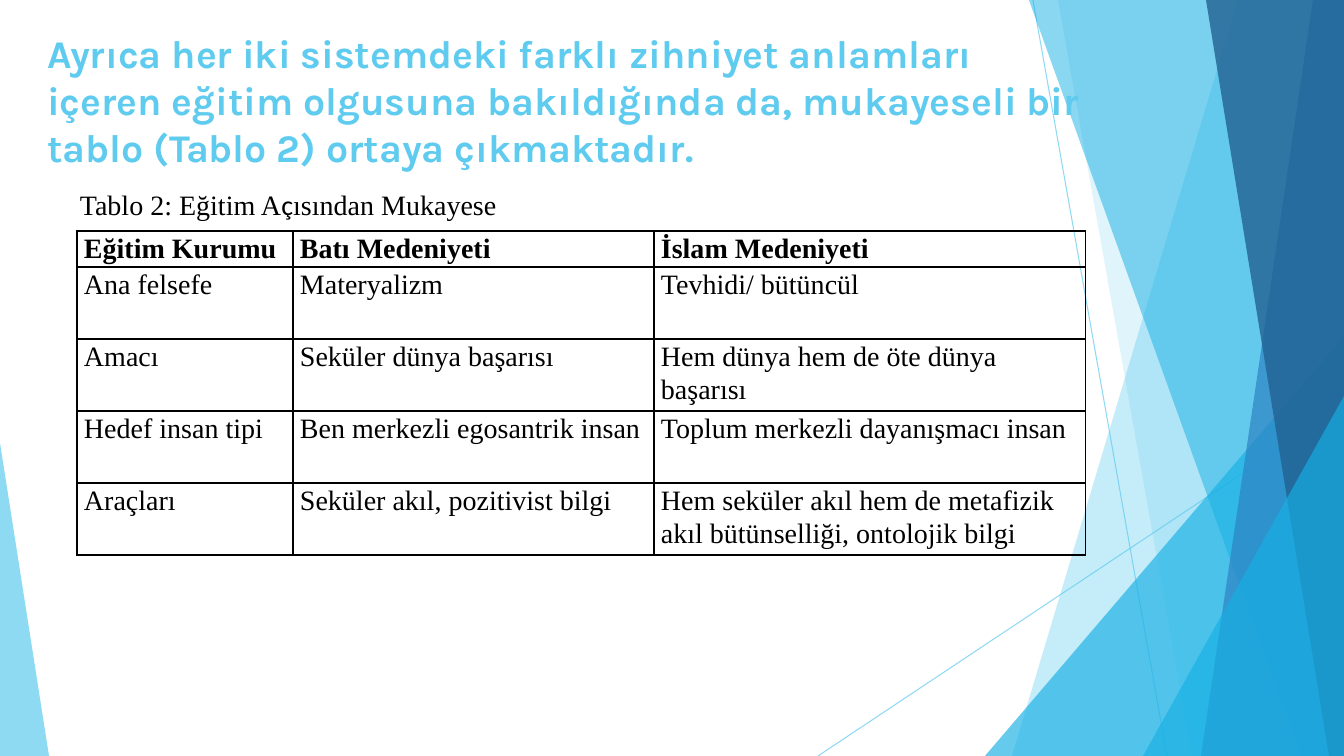
import lxml.etree
import pptx
import pptx.dml.color
import pptx.enum.shapes
import pptx.enum.text
import pptx.oxml.ns
import pptx.util

WIDTH, HEIGHT = 1344, 756
SCALE = 12192000 / WIDTH
SKY = pptx.dml.color.RGBColor(0x5F, 0xCB, 0xEF)
CYAN = pptx.dml.color.RGBColor(0x17, 0xB0, 0xE4)
BLUE = pptx.dml.color.RGBColor(0x2E, 0x83, 0xC3)
NAVY = pptx.dml.color.RGBColor(0x22, 0x62, 0x92)
BLACK = pptx.dml.color.RGBColor(0, 0, 0)
SERIF = "Times New Roman"

TITLE = ("Ayrıca her iki sistemdeki farklı zihniyet anlamları içeren eğitim olgusuna "
         "bakıldığında da, mukayeseli bir tablo (Tablo 2) ortaya çıkmaktadır.")
CAPTION = [("Tablo 2: Eğitim A", SERIF), ("ç", "Calibri"), ("ısından Mukayese", SERIF)]
COLUMNS = [216, 361, 432]
HEADER_HEIGHT, ROW_HEIGHT = 36, 72
ROWS = [
    ("Eğitim Kurumu", "Batı Medeniyeti", "İslam Medeniyeti"),
    ("Ana felsefe", "Materyalizm", "Tevhidi/ bütüncül"),
    ("Amacı", "Seküler dünya başarısı", "Hem dünya hem de öte dünya başarısı"),
    ("Hedef insan tipi", "Ben merkezli egosantrik insan", "Toplum merkezli dayanışmacı insan"),
    ("Araçları", "Seküler akıl, pozitivist bilgi",
     "Hem seküler akıl hem de metafizik akıl bütünselliği, ontolojik bilgi"),
]


def px(*lengths):
    return [pptx.util.Emu(round(length * SCALE)) for length in lengths]


def add_child(parent, tag, **attributes):
    return lxml.etree.SubElement(parent, pptx.oxml.ns.qn(tag), attributes)


def set_opacity(element, percent):
    for color in element.iter(pptx.oxml.ns.qn("a:srgbClr")):
        add_child(color, "a:alpha", val=str(percent * 1000))


def paint(shape, color, opacity):
    shape.shadow.inherit = False
    shape.line.fill.background()
    shape.fill.solid()
    shape.fill.fore_color.rgb = color
    set_opacity(shape.element.spPr, opacity)


def add_ray(page, start, end):
    ray = page.shapes.add_connector(
        pptx.enum.shapes.MSO_CONNECTOR.STRAIGHT, *px(*start, *end))
    ray.line.color.rgb = SKY
    ray.line.width = pptx.util.Pt(0.75)
    set_opacity(ray.element.spPr, 70)
    add_child(ray.element.spPr, "a:effectLst")


def add_band(page, top_left, bottom_left, color, opacity):
    outline = page.shapes.build_freeform(top_left, 0, scale=SCALE)
    outline.add_line_segments([(WIDTH, 0), (WIDTH, HEIGHT), (bottom_left, HEIGHT)])
    paint(outline.convert_to_shape(), color, opacity)


def add_triangle(page, left, top, width, apex, color, opacity):
    triangle = page.shapes.add_shape(
        pptx.enum.shapes.MSO_SHAPE.ISOSCELES_TRIANGLE, *px(left, top, width, HEIGHT - top))
    triangle.adjustments[0] = apex
    paint(triangle, color, opacity)


def add_backdrop(page):
    add_ray(page, (1033, 0), (1167, HEIGHT))
    add_ray(page, (WIDTH, 406), (818, HEIGHT))
    add_band(page, 1238, 1012, SKY, 36)
    add_band(page, 1058, 1192, SKY, 20)
    add_triangle(page, 985, 336, 359, 1, CYAN, 66)
    add_band(page, 1029, 1301, CYAN, 50)
    add_band(page, 1313, 1201, BLUE, 70)
    add_band(page, 1206, 1329, NAVY, 80)
    add_triangle(page, 1143, 396, 201, 1, CYAN, 66)
    add_triangle(page, 0, 443, 49, 0, SKY, 70)


def set_font(font, name, size, color, bold):
    font.name = name
    font.size = pptx.util.Pt(size)
    font.color.rgb = color
    font.bold = bold


def add_title(page, left, top, width, height):
    title = page.shapes.title
    title.left, title.top, title.width, title.height = px(left, top, width, height)
    title.element.getparent().append(title.element)
    frame = title.text_frame
    frame.text = TITLE
    frame.word_wrap = True
    frame.auto_size = pptx.enum.text.MSO_AUTO_SIZE.NONE
    frame.vertical_anchor = pptx.enum.text.MSO_ANCHOR.TOP
    para = frame.paragraphs[0]
    para.alignment = pptx.enum.text.PP_ALIGN.LEFT
    set_font(para.font, "Karla", 28, SKY, True)


def add_caption(page, left, top, width, height):
    box = page.shapes.add_textbox(*px(left, top, width, height))
    frame = box.text_frame
    frame.word_wrap = True
    frame.auto_size = pptx.enum.text.MSO_AUTO_SIZE.SHAPE_TO_FIT_TEXT
    frame.vertical_anchor = pptx.enum.text.MSO_ANCHOR.MIDDLE
    para = frame.paragraphs[0]
    para.alignment = pptx.enum.text.PP_ALIGN.JUSTIFY
    for text, font_name in CAPTION:
        span = para.add_run()
        span.text = text
        set_font(span.font, font_name, 20, BLACK, False)


def add_borders(cell):
    properties = cell._tc.get_or_add_tcPr()
    for side in ("a:lnL", "a:lnR", "a:lnT", "a:lnB"):
        border = add_child(properties, side, w=str(pptx.util.Pt(1)))
        fill = add_child(border, "a:solidFill")
        add_child(fill, "a:srgbClr", val=str(BLACK))


def fill_cell(cell, text, bold):
    add_borders(cell)
    cell.fill.background()
    cell.margin_left, cell.margin_right, cell.margin_top, cell.margin_bottom = px(7, 7, 0, 0)
    cell.text = text
    para = cell.text_frame.paragraphs[0]
    para.line_spacing = 1.07
    set_font(para.font, SERIF, 20, BLACK, bold)


def add_comparison(page, left, top):
    heights = [HEADER_HEIGHT] + [ROW_HEIGHT] * (len(ROWS) - 1)
    table = page.shapes.add_table(
        len(ROWS), len(COLUMNS), *px(left, top, sum(COLUMNS), sum(heights))).table
    table.first_row = table.horz_banding = False
    for column, width in zip(table.columns, px(*COLUMNS)):
        column.width = width
    for row, height in zip(table.rows, px(*heights)):
        row.height = height
    for row_index, texts in enumerate(ROWS):
        for column_index, text in enumerate(texts):
            fill_cell(table.cell(row_index, column_index), text, row_index == 0)


def main():
    deck = pptx.Presentation()
    deck.slide_width, deck.slide_height = px(WIDTH, HEIGHT)
    page = deck.slides.add_slide(deck.slide_layouts.get_by_name("Title Only"))
    add_backdrop(page)
    add_title(page, 37, 24, 1067, 148)
    add_caption(page, 70, 182, 1223, 44)
    add_comparison(page, 77, 231)
    deck.save("out.pptx")


if __name__ == "__main__":
    main()
